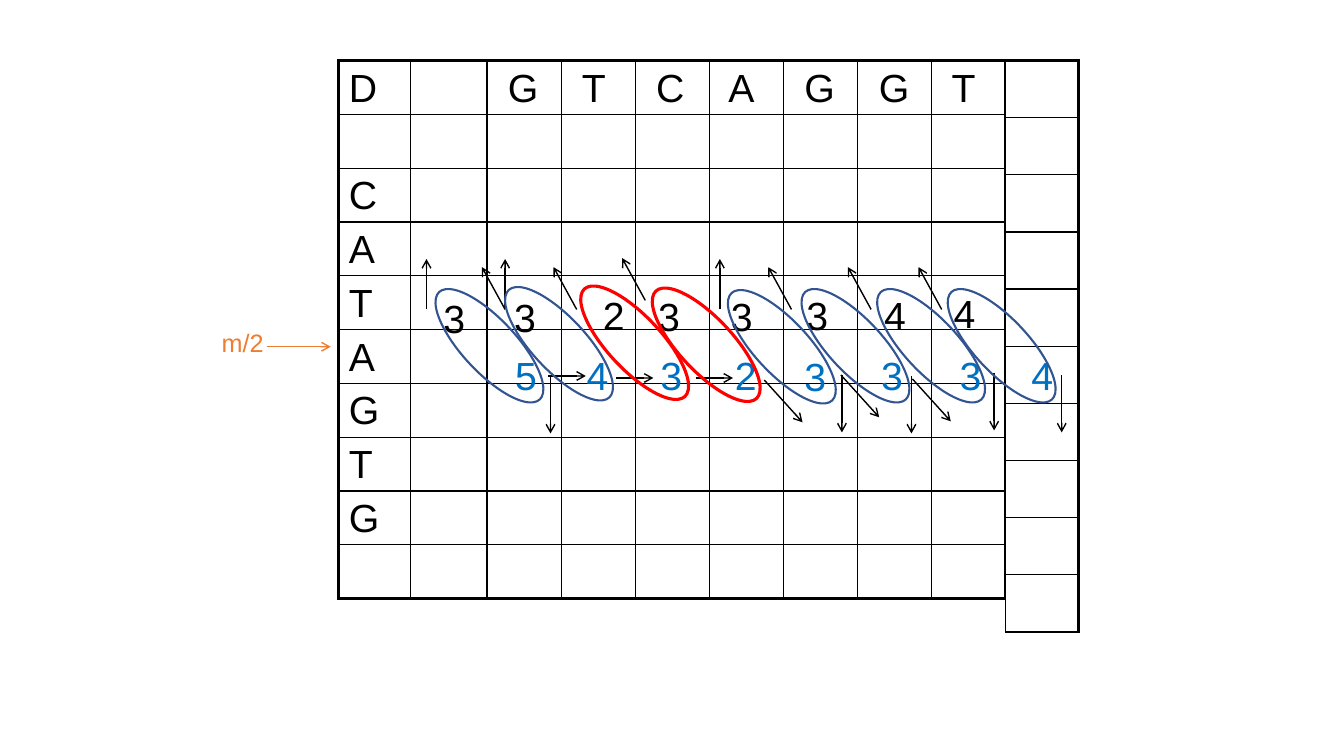
from dataclasses import dataclass

from lxml import etree
from pptx import Presentation, util as u
from pptx.dml.color import RGBColor
from pptx.enum import shapes, text
from pptx.oxml import ns

HEADER = ["D", "", " G", " T", " C", " A", " G", " G", " T"]
SIDE = ["D", "", "C", "A", "T", "A", "G", "T", "G", ""]
GRID = [[side] + [""] * 8 for side in SIDE]
GRID[0] = HEADER
EXTRA_GRID = [[""] for side in SIDE]
COLUMNS = [0.71, 0.76, 0.74, 0.73, 0.74, 0.73, 0.74, 0.73, 0.73]

UPPER_SCORES = [("3", 4.3, 2.87), ("3", 5, 2.86), ("2", 5.88, 2.84), ("3", 6.43, 2.85),
                ("3", 7.15, 2.85), ("3", 7.9, 2.84), ("4", 8.67, 2.84), ("4", 9.36, 2.82)]
LOWER_SCORES = [("5", 5.01, 3.44), ("4", 5.72, 3.44), ("3", 6.45, 3.44), ("2", 7.19, 3.44),
                ("3", 7.88, 3.45), ("3", 8.64, 3.44), ("3", 9.42, 3.44), ("4", 10.13, 3.44)]

STEPS = {"up": (0, -0.5), "up-left": (-0.23, -0.42), "right": (0.37, 0),
         "down": (0, 0.57), "down-right": (0.38, 0.42)}
ARROWS = {
    "up": [(4.23, 3.07), (5.01, 3.07), (7.14, 3.07)],
    "up-left": [(5.01, 3.07), (5.72, 3.07), (6.4, 2.98), (7.85, 3.07), (8.64, 3.07), (9.34, 3.07)],
    "right": [(5.44, 3.73), (6.11, 3.75), (6.9, 3.75)],
    "down": [(5.46, 3.73), (8.35, 3.72), (9.04, 3.73), (9.86, 3.7), (10.53, 3.72)],
    "down-right": [(7.58, 3.77), (8.34, 3.72), (9.05, 3.76)],
}
PAIRS = [(4.59, 2.7), (5.28, 2.68), (6.03, 2.67), (6.74, 2.69),
         (7.49, 2.71), (8.22, 2.7), (8.97, 2.7), (9.67, 2.7)]
BEST_PAIRS = PAIRS[2:4]


@dataclass(frozen=True)
class Theme:
    """Colours, font and type sizes of the slide."""
    ink: str = "000000"
    lower: str = "0070C0"
    middle: str = "ED7D31"
    pair: str = "325491"
    best: str = "FF0000"
    font: str = "Arial"
    score_size: int = 28
    label_size: int = 18
    thin: float = 1
    medium: float = 1.5
    thick: float = 2.25


THEME = Theme()


def style_text(para, size, color):
    for span in para.runs:
        span.font.name = THEME.font
        span.font.size = u.Pt(size)
        span.font.color.rgb = RGBColor.from_string(color)


def style_line(line, color, width):
    line.color.rgb = RGBColor.from_string(color)
    line.width = u.Pt(width)


def add_border(cell, index, side, width):
    border = etree.Element(ns.qn(f"a:ln{side}"), w=str(u.Pt(width)))
    fill = etree.SubElement(border, ns.qn("a:solidFill"))
    etree.SubElement(fill, ns.qn("a:srgbClr"), val=THEME.ink)
    cell._tc.get_or_add_tcPr().insert(index, border)


def add_grid(page, rows, widths, left, height, thick_left):
    frame = page.shapes.add_table(len(rows), len(widths), u.Inches(left), u.Inches(0.6),
                                  u.Inches(sum(widths)), u.Inches(height))
    table = frame.table
    table.first_row = table.horz_banding = False
    for column, width in zip(table.columns, widths):
        column.width = u.Inches(width)
    last_row, last_column = len(rows) - 1, len(widths) - 1
    for r, row in enumerate(rows):
        table.rows[r].height = u.Inches(height / len(rows))
        for c, letter in enumerate(row):
            cell = table.cell(r, c)
            cell.fill.background()
            cell.vertical_anchor = text.MSO_ANCHOR.BOTTOM
            cell.margin_top = cell.margin_bottom = u.Inches(0.04)
            if letter:
                cell.text_frame.text = letter
                style_text(cell.text_frame.paragraphs[0], THEME.score_size, THEME.ink)
            edges = {"L": thick_left and c == 0, "R": c == last_column,
                     "T": r == 0, "B": r == last_row}
            for index, (side, outer) in enumerate(edges.items()):
                add_border(cell, index, side, THEME.thick if outer else THEME.thin)


def add_label(parent, words, left, top, width, height, size, color):
    box = parent.shapes.add_textbox(*map(u.Inches, (left, top, width, height)))
    box.text_frame.word_wrap = True
    box.text_frame.text = words
    style_text(box.text_frame.paragraphs[0], size, color)


def add_arrow(parent, x, y, step, color):
    dx, dy = step
    arrow = parent.shapes.add_connector(shapes.MSO_CONNECTOR.STRAIGHT,
                                        *map(u.Inches, (x, y, x + dx, y + dy)))
    style_line(arrow.line, color, THEME.thin)
    etree.SubElement(arrow.line._get_or_add_ln(), ns.qn("a:tailEnd"), type="arrow")
    etree.SubElement(arrow._element.spPr, ns.qn("a:effectLst"))


def add_pair(page, left, top, color, width):
    oval = page.shapes.add_shape(shapes.MSO_SHAPE.OVAL, *map(u.Inches, (left, top, 0.53, 1.46)))
    oval.rotation = 316.9
    oval.shadow.inherit = False
    oval.fill.background()
    style_line(oval.line, color, width)


def main():
    """Build the alignment matrix slide with its middle-row scores."""
    deck = Presentation()
    deck.slide_width, deck.slide_height = u.Inches(13.33), u.Inches(7.5)
    page = deck.slides.add_slide(deck.slide_layouts[6])

    add_grid(page, GRID, COLUMNS, 3.36, 5.34, True)
    add_grid(page, EXTRA_GRID, [0.73], 9.97, 5.67, False)

    marker = page.shapes.add_group_shape()
    add_arrow(marker, 2.65, 3.44, (0.63, 0), THEME.middle)
    add_label(marker, "m/2", 2.1, 3.2, 0.63, 0.4, THEME.label_size, THEME.middle)

    for scores, color in ((UPPER_SCORES, THEME.ink), (LOWER_SCORES, THEME.lower)):
        for score, left, top in scores:
            add_label(page, score, left, top, 0.42, 0.57, THEME.score_size, color)
    for direction, starts in ARROWS.items():
        for x, y in starts:
            add_arrow(page, x, y, STEPS[direction], THEME.ink)
    for pair in PAIRS:
        best = pair in BEST_PAIRS
        add_pair(page, *pair, THEME.best if best else THEME.pair,
                 THEME.thick if best else THEME.medium)

    deck.save("out.pptx")


if __name__ == "__main__":
    main()
